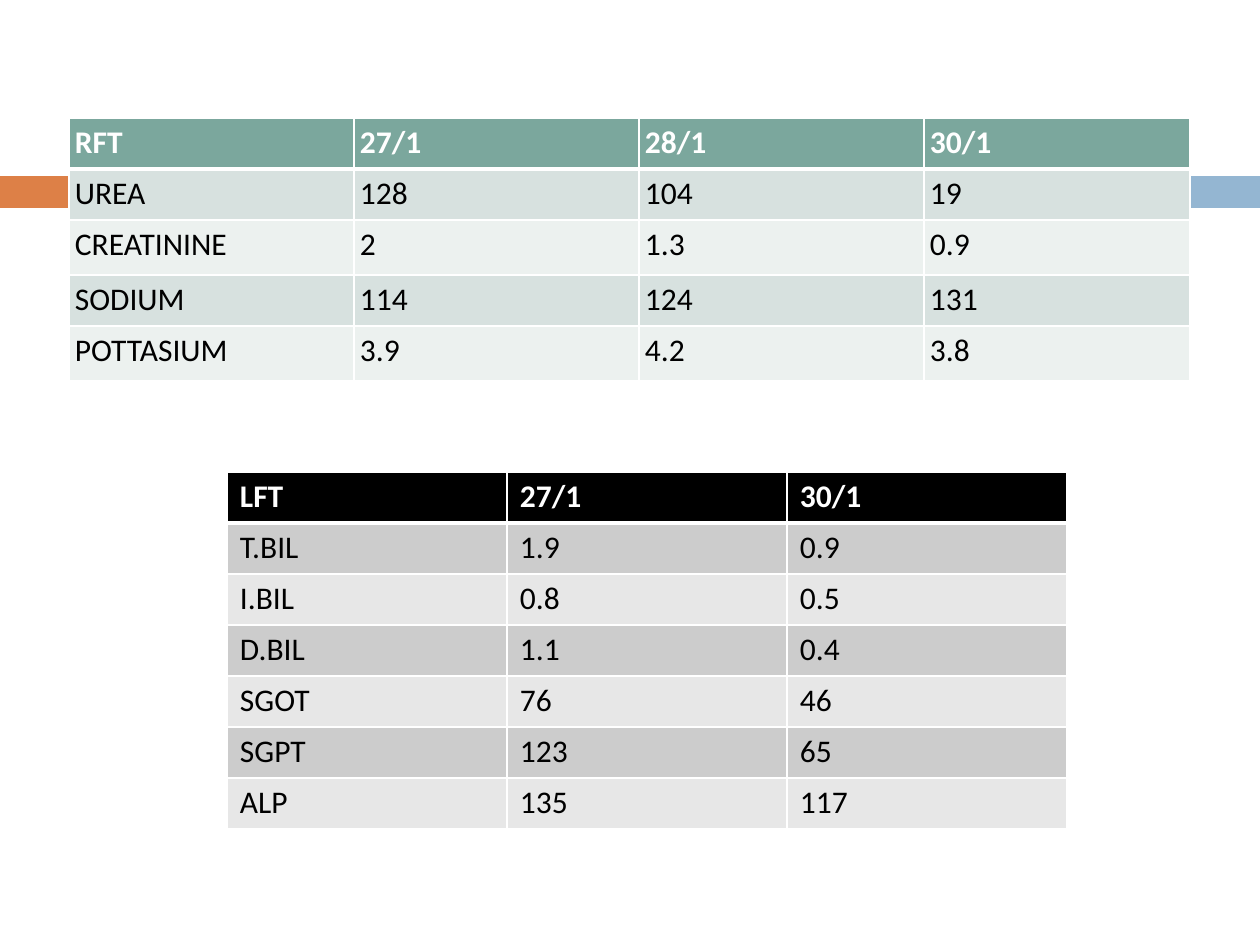
from dataclasses import dataclass

from lxml import etree
from pptx import Presentation
from pptx.dml.color import RGBColor
from pptx.enum.shapes import MSO_SHAPE
from pptx.oxml.ns import qn
from pptx.util import Pt

RECT = MSO_SHAPE.RECTANGLE
EMU_PER_INCH = 914400
PX_PER_INCH = 126


@dataclass(frozen=True)
class Theme:
    font: str = "Calibri"
    size: int = 18
    light: str = "FFFFFF"
    dark: str = "000000"
    orange: str = "DD8047"
    blue: str = "94B6D2"
    green: tuple = ("7BA79D", "D7E1DF", "ECF1EF")
    grey: tuple = ("000000", "CCCCCC", "E7E7E7")
    thin: int = 1
    thick: int = 3


THEME = Theme()

RFT = [
    ["RFT", "27/1", "28/1", "30/1"],
    ["UREA", "128", "104", "19"],
    ["CREATININE", "2", "1.3", "0.9"],
    ["SODIUM", "114", "124", "131"],
    ["POTTASIUM", "3.9", "4.2", "3.8"],
]
LFT = [
    ["LFT", "27/1", "30/1"],
    ["T.BIL", "1.9", "0.9"],
    ["I.BIL", "0.8", "0.5"],
    ["D.BIL", "1.1", "0.4"],
    ["SGOT", "76", "46"],
    ["SGPT", "123", "65"],
    ["ALP", "135", "117"],
]


def px(n):
    return round(n * EMU_PER_INCH / PX_PER_INCH)


def rgb(value):
    return RGBColor.from_string(value)


def add_band(slide, box, color):
    sp = slide.shapes.add_shape(RECT, *map(px, box))
    sp.shadow.inherit = False
    sp.fill.solid()
    sp.fill.fore_color.rgb = rgb(color)
    sp.line.fill.background()


def add_bands(slide, box, split, gap):
    left, top, width, height = box
    add_band(slide, (left, top, split, height), THEME.orange)
    right = left + split + gap
    add_band(slide, (right, top, left + width - right, height), THEME.blue)


def set_borders(cell, row):
    tc_pr = cell._tc.get_or_add_tcPr()
    widths = {
        "a:lnL": THEME.thin,
        "a:lnR": THEME.thin,
        "a:lnT": THEME.thick if row == 1 else THEME.thin,
        "a:lnB": THEME.thick if row == 0 else THEME.thin,
    }
    for tag, width in widths.items():
        ln = etree.SubElement(tc_pr, qn(tag), w=str(Pt(width)))
        fill = etree.SubElement(ln, qn("a:solidFill"))
        etree.SubElement(fill, qn("a:srgbClr"), val=THEME.light)


def fill_cell(cell, text, row, colors, inset):
    set_borders(cell, row)
    cell.fill.solid()
    cell.fill.fore_color.rgb = rgb(colors[0 if row == 0 else 2 - row % 2])
    cell.margin_left = cell.margin_right = px(inset[0])
    cell.margin_top = cell.margin_bottom = px(inset[1])
    r = cell.text_frame.paragraphs[0].add_run()
    r.text = text
    r.font.name = THEME.font
    r.font.size = Pt(THEME.size)
    r.font.bold = row == 0
    r.font.color.rgb = rgb(THEME.light if row == 0 else THEME.dark)


def add_results(slide, origin, data, cols, rows, colors, inset):
    box = (*origin, sum(cols), sum(rows))
    frame = slide.shapes.add_table(len(rows), len(cols), *map(px, box))
    table = frame.table
    for column, width in zip(table.columns, cols):
        column.width = px(width)
    for i, (height, values) in enumerate(zip(rows, data)):
        table.rows[i].height = px(height)
        for j, text in enumerate(values):
            fill_cell(table.cell(i, j), text, i, colors, inset)


def main():
    prs = Presentation()
    prs.slide_width, prs.slide_height = px(1260), px(945)
    slide = prs.slides.add_slide(prs.slide_layouts[6])
    add_bands(slide, (0, 176, 1260, 32), 73, 9)
    add_results(slide, (69, 118), RFT, [285, 285, 285, 266],
                [51, 51, 55, 51, 55], THEME.green, (6, 6))
    add_results(slide, (227, 472), LFT, [280] * 3,
                [51] * 7, THEME.grey, (13, 6))
    prs.save("out.pptx")


if __name__ == "__main__":
    main()
